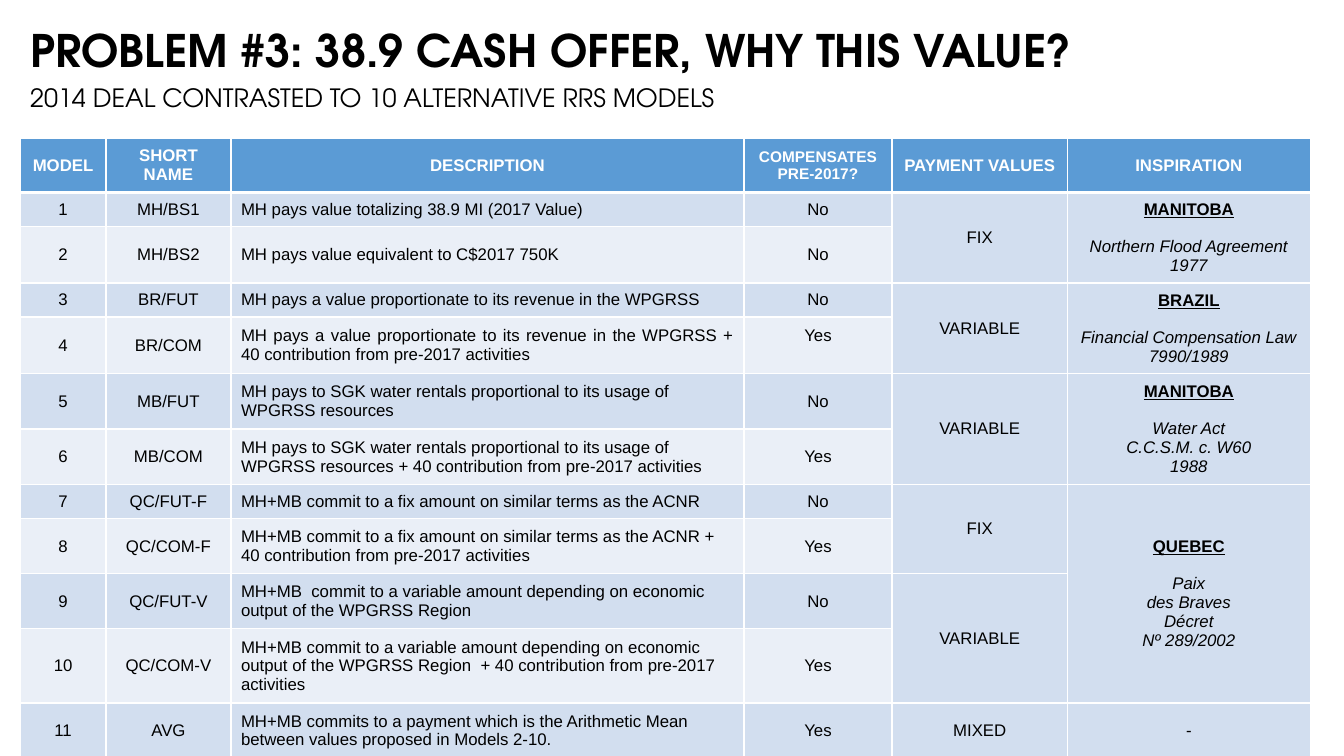
from pptx import Presentation
from pptx.dml.color import RGBColor
from pptx.enum.text import MSO_ANCHOR, PP_ALIGN
from pptx.oxml import parse_xml
from pptx.util import Cm, Pt

LEFT, CENTER, JUSTIFY = PP_ALIGN.LEFT, PP_ALIGN.CENTER, PP_ALIGN.JUSTIFY
MIDDLE = MSO_ANCHOR.MIDDLE
NAMESPACE = "http://schemas.openxmlformats.org/drawingml/2006/main"

COLORS = {"header": "5B9BD5", "dark": "D2DEEF", "light": "EAEFF7",
          "white": "FFFFFF", "black": "000000"}
TITLE_FONT, TABLE_FONT = "TeX Gyre Adventor", "Arial"

# text, top, width, height (cm), font format
HEADINGS = [
    ("PROBLEM #3: 38.9 CASH OFFER, WHY THIS VALUE?", 0.46, 27.18, 1.63,
     {"size": Pt(32), "bold": True}),
    ("2014 DEAL CONTRASTED TO 10 ALTERNATIVE RRS MODELS", 1.96, 18.03, 1.02,
     {"size": Pt(18), "bold": False}),
]

HEADER = [["MODEL"], ["SHORT NAME"], ["DESCRIPTION"], ["COMPENSATES", "PRE-2017?"],
          ["PAYMENT VALUES"], ["INSPIRATION"]]
# short name, description, compensates before 2017
MODELS = [
    ("MH/BS1", "MH pays value totalizing 38.9 MI (2017 Value)", "No"),
    ("MH/BS2", "MH pays value equivalent to C$2017 750K", "No"),
    ("BR/FUT", "MH pays a value proportionate to its revenue in the WPGRSS", "No"),
    ("BR/COM", "MH pays a value proportionate to its revenue in the WPGRSS + "
               "40 contribution from pre-2017 activities", "Yes"),
    ("MB/FUT", "MH pays to SGK water rentals proportional to its usage of "
               "WPGRSS resources", "No"),
    ("MB/COM", "MH pays to SGK water rentals proportional to its usage of "
               "WPGRSS resources + 40 contribution from pre-2017 activities", "Yes"),
    ("QC/FUT-F", "MH+MB commit to a fix amount on similar terms as the ACNR", "No"),
    ("QC/COM-F", "MH+MB commit to a fix amount on similar terms as the ACNR + "
                 "40 contribution from pre-2017 activities", "Yes"),
    ("QC/FUT-V", "MH+MB  commit to a variable amount depending on economic "
                 "output of the WPGRSS Region", "No"),
    ("QC/COM-V", "MH+MB commit to a variable amount depending on economic "
                 "output of the WPGRSS Region  + 40 contribution from pre-2017 "
                 "activities", "Yes"),
    ("AVG", "MH+MB commits to a payment which is the Arithmetic Mean "
            "between values proposed in Models 2-10.", "Yes"),
]
# first model, last model, lines
PAYMENTS = [(1, 2, ["FIX"]), (3, 4, ["VARIABLE"]), (5, 6, ["VARIABLE"]),
            (7, 8, ["FIX"]), (9, 10, ["VARIABLE"]), (11, 11, ["MIXED"])]
INSPIRATIONS = [
    (1, 2, ["MANITOBA", "Northern Flood Agreement 1977"]),
    (3, 4, ["BRAZIL", "Financial Compensation Law", "7990/1989"]),
    (5, 6, ["MANITOBA", "Water Act", "C.C.S.M. c. W60", "1988"]),
    (7, 10, ["QUEBEC", "Paix", "des Braves", "Décret", "Nº 289/2002"]),
    (11, 11, ["-"]),
]
JUSTIFIED_MODEL = 4

MARGIN_LEFT, TABLE_TOP = 0.51, 3.49
COLUMN_WIDTHS = [2.16, 3.15, 12.93, 3.73, 4.42, 6.12]
ROW_HEIGHTS = [1.36, 0.86, 1.42, 0.86, 1.42, 1.4, 1.4, 0.86, 1.39, 1.39, 1.87, 1.39]


def set_format(font, values):
    for name, value in values.items():
        setattr(font, name, value)


def write(para, text, color, values):
    span = para.add_run()
    span.text = text
    set_format(span.font, values)
    span.font.color.rgb = RGBColor.from_string(COLORS[color])


def fill_cell(cell, lines, color="black", align=CENTER, **values):
    """Write the lines; a heading over further lines is underlined, the rest italic."""
    base = {"name": TABLE_FONT, "size": Pt(12), "bold": False, **values}
    frame = cell.text_frame
    titled = len(lines) > 1 and color == "black"
    for index, line in enumerate(lines):
        para = frame.add_paragraph() if index else frame.paragraphs[0]
        para.alignment = align
        style = {}
        if titled:
            style = {"italic": True} if index else {"bold": True, "underline": True}
            if index == 1:
                para.space_before = Pt(13)
        write(para, line, color, {**base, **style})


def paint_cell(cell, row):
    """Give the cell white borders, thicker under the header, and its band colour."""
    properties = cell._tc.get_or_add_tcPr()
    widths = {"L": 1, "R": 1, "T": 3 if row == 1 else 1, "B": 1 if row else 3}
    for side, width in widths.items():
        properties.append(parse_xml(
            f'<a:ln{side} xmlns:a="{NAMESPACE}" w="{Pt(width)}"><a:solidFill>'
            f'<a:srgbClr val="{COLORS["white"]}"/></a:solidFill></a:ln{side}>'))
    band = "header" if row == 0 else "dark" if row % 2 else "light"
    cell.fill.solid()
    cell.fill.fore_color.rgb = RGBColor.from_string(COLORS[band])
    cell.vertical_anchor = MIDDLE


def add_headings(page):
    for text, top, width, height, values in HEADINGS:
        box = page.shapes.add_textbox(Cm(MARGIN_LEFT), Cm(top), Cm(width), Cm(height))
        box.text_frame.word_wrap = False
        write(box.text_frame.paragraphs[0], text, "black",
              {"name": TITLE_FONT, **values})


def add_models_table(page):
    table = page.shapes.add_table(
        len(ROW_HEIGHTS), len(COLUMN_WIDTHS), Cm(MARGIN_LEFT), Cm(TABLE_TOP),
        Cm(sum(COLUMN_WIDTHS)), Cm(sum(ROW_HEIGHTS))).table
    table.horz_banding = False
    for column, width in zip(table.columns, COLUMN_WIDTHS):
        column.width = Cm(width)
    for index, height in enumerate(ROW_HEIGHTS):
        table.rows[index].height = Cm(height)
        for column in range(len(COLUMN_WIDTHS)):
            paint_cell(table.cell(index, column), index)

    for column, lines in enumerate(HEADER):
        size = Pt(11) if len(lines) > 1 else Pt(12)
        fill_cell(table.cell(0, column), lines, "white", bold=True, size=size)
    for number, (name, description, compensates) in enumerate(MODELS, 1):
        body = JUSTIFY if number == JUSTIFIED_MODEL else LEFT
        entries = [(str(number), CENTER), (name, CENTER),
                   (description, body), (compensates, CENTER)]
        for column, (text, align) in enumerate(entries):
            fill_cell(table.cell(number, column), [text], align=align)
    table.cell(JUSTIFIED_MODEL, 3).margin_bottom = Cm(0.59)
    for column, groups in ((4, PAYMENTS), (5, INSPIRATIONS)):
        for first, last, lines in groups:
            cell = table.cell(first, column)
            if last > first:
                cell.merge(table.cell(last, column))
            fill_cell(cell, lines)


def main():
    deck = Presentation()
    deck.slide_width, deck.slide_height = Cm(33.87), Cm(19.05)
    page = deck.slides.add_slide(deck.slide_layouts[6])
    add_headings(page)
    add_models_table(page)
    deck.save("out.pptx")


if __name__ == "__main__":
    main()
